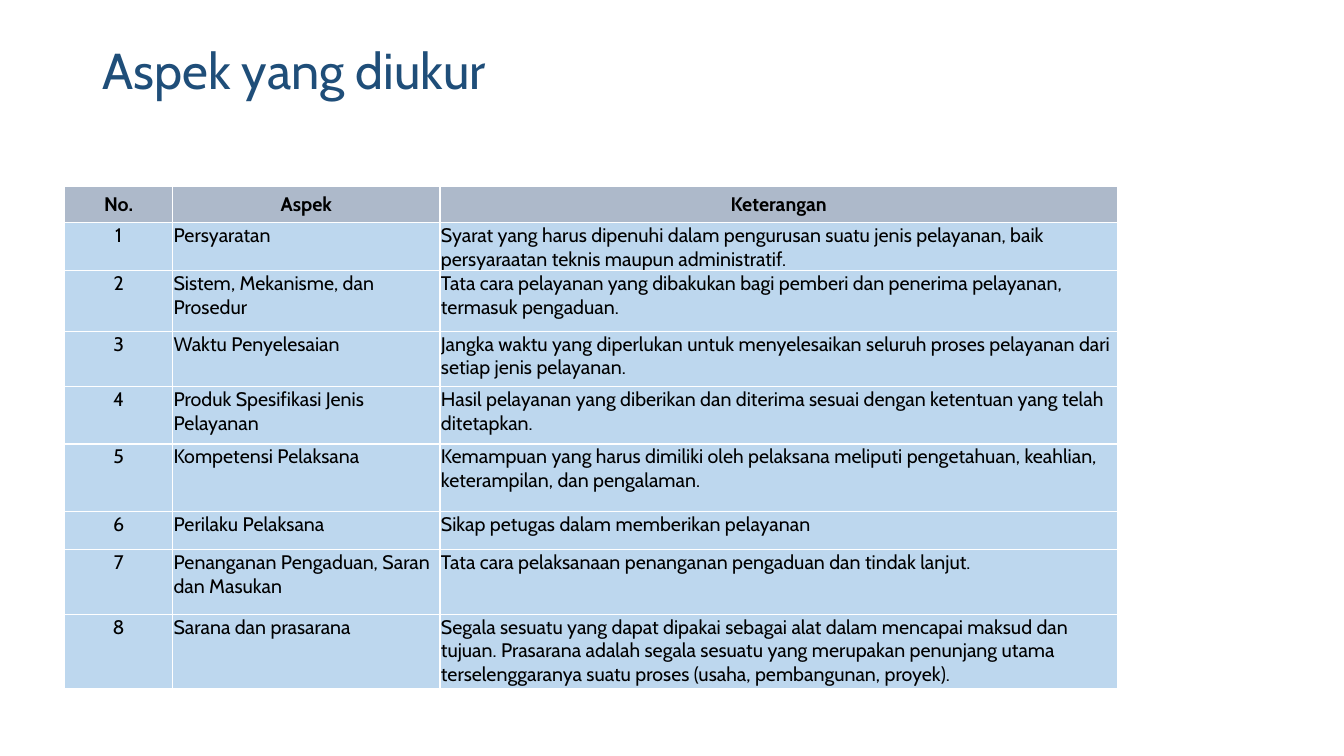
import pptx
import pptx.util
import pptx.dml.color
import pptx.enum.text
import pptx.oxml.ns
from lxml import etree

Pt = pptx.util.Pt
RGBColor = pptx.dml.color.RGBColor
ALIGN = pptx.enum.text.PP_ALIGN
ANCHOR = pptx.enum.text.MSO_ANCHOR

TITLE_BLUE = RGBColor(0x1F, 0x4E, 0x79)
HEADER_GREY = RGBColor(0xAD, 0xB9, 0xCA)
BODY_BLUE = RGBColor(0xBD, 0xD7, 0xEE)
BLACK = RGBColor(0, 0, 0)
WHITE = RGBColor(0xFF, 0xFF, 0xFF)
FONT = "Cabin"

HEADERS = ("No.", "Aspek", "Keterangan")
ASPECTS = [
    ("Persyaratan",
     "Syarat yang harus dipenuhi dalam pengurusan suatu jenis pelayanan, baik "
     "persyaraatan teknis maupun administratif."),
    ("Sistem, Mekanisme, dan Prosedur",
     "Tata cara pelayanan yang dibakukan bagi pemberi dan penerima pelayanan, "
     "termasuk pengaduan."),
    ("Waktu Penyelesaian",
     "Jangka waktu yang diperlukan untuk menyelesaikan seluruh proses pelayanan "
     "dari setiap jenis pelayanan."),
    ("Produk Spesifikasi Jenis Pelayanan",
     "Hasil pelayanan yang diberikan dan diterima sesuai dengan ketentuan yang "
     "telah ditetapkan."),
    ("Kompetensi Pelaksana",
     "Kemampuan yang harus dimiliki oleh pelaksana meliputi pengetahuan, "
     "keahlian, keterampilan, dan pengalaman."),
    ("Perilaku Pelaksana",
     "Sikap petugas dalam memberikan pelayanan"),
    ("Penanganan Pengaduan, Saran dan Masukan",
     "Tata cara pelaksanaan penanganan pengaduan dan tindak lanjut."),
    ("Sarana dan prasarana",
     "Segala sesuatu yang dapat dipakai sebagai alat dalam mencapai maksud dan "
     "tujuan. Prasarana adalah segala sesuatu yang merupakan penunjang utama "
     "terselenggaranya suatu proses (usaha, pembangunan, proyek)."),
]
COLUMN_WIDTHS = (77, 191, 484)
ROW_HEIGHTS = (26, 31, 43.2, 39.8, 40.8, 48.4, 27, 46.2, 53)


def set_attributes(target, values):
    for name, value in values.items():
        setattr(target, name, value)


def write_text(p, text, size, color, bold=False):
    r = p.add_run()
    r.text = text
    set_attributes(r.font, {"name": FONT, "size": Pt(size), "bold": bold})
    r.font.color.rgb = color


def add_title(s, left, top, width, height, text):
    sp = s.shapes.add_textbox(Pt(left), Pt(top), Pt(width), Pt(height))
    tf = sp.text_frame
    set_attributes(tf, {"word_wrap": True, "vertical_anchor": ANCHOR.MIDDLE})
    p = tf.paragraphs[0]
    p.line_spacing = 0.9
    write_text(p, text, 36, TITLE_BLUE)


def add_borders(cell, color, width):
    tc_pr = cell._tc.get_or_add_tcPr()
    qn = pptx.oxml.ns.qn
    for side in ("a:lnL", "a:lnR", "a:lnT", "a:lnB"):
        line = etree.SubElement(tc_pr, qn(side), w=str(Pt(width)))
        fill = etree.SubElement(line, qn("a:solidFill"))
        etree.SubElement(fill, qn("a:srgbClr"), val=str(color))


def fill_cell(cell, text, header, centered):
    set_attributes(cell, {
        "margin_left": Pt(0.7), "margin_right": Pt(0.7),
        "margin_top": Pt(0.7), "margin_bottom": Pt(0),
        "vertical_anchor": ANCHOR.MIDDLE if header else ANCHOR.TOP,
    })
    add_borders(cell, WHITE, 1)
    cell.fill.solid()
    cell.fill.fore_color.rgb = HEADER_GREY if header else BODY_BLUE
    p = cell.text_frame.paragraphs[0]
    p.alignment = ALIGN.CENTER if centered else ALIGN.LEFT
    write_text(p, text, 14, BLACK, header)


def add_aspect_table(s, left, top):
    rows = [HEADERS] + [(str(n), *aspect) for n, aspect in enumerate(ASPECTS, 1)]
    table = s.shapes.add_table(
        len(rows), len(HEADERS), Pt(left), Pt(top),
        Pt(sum(COLUMN_WIDTHS)), Pt(sum(ROW_HEIGHTS))).table
    for column, width in zip(table.columns, COLUMN_WIDTHS):
        column.width = Pt(width)
    for i, (row, height) in enumerate(zip(rows, ROW_HEIGHTS)):
        table.rows[i].height = Pt(height)
        for j, text in enumerate(row):
            fill_cell(table.cell(i, j), text, i == 0, i == 0 or j == 0)


def main():
    prs = pptx.Presentation()
    set_attributes(prs, {"slide_width": Pt(960), "slide_height": Pt(540)})
    s = prs.slides.add_slide(prs.slide_layouts[6])
    # Heading
    add_title(s, 66, 28.8, 828, 47.5, "Aspek yang diukur")
    # Numbered aspects with their descriptions
    add_aspect_table(s, 46.3, 133)
    prs.save("out.pptx")


if __name__ == "__main__":
    main()
